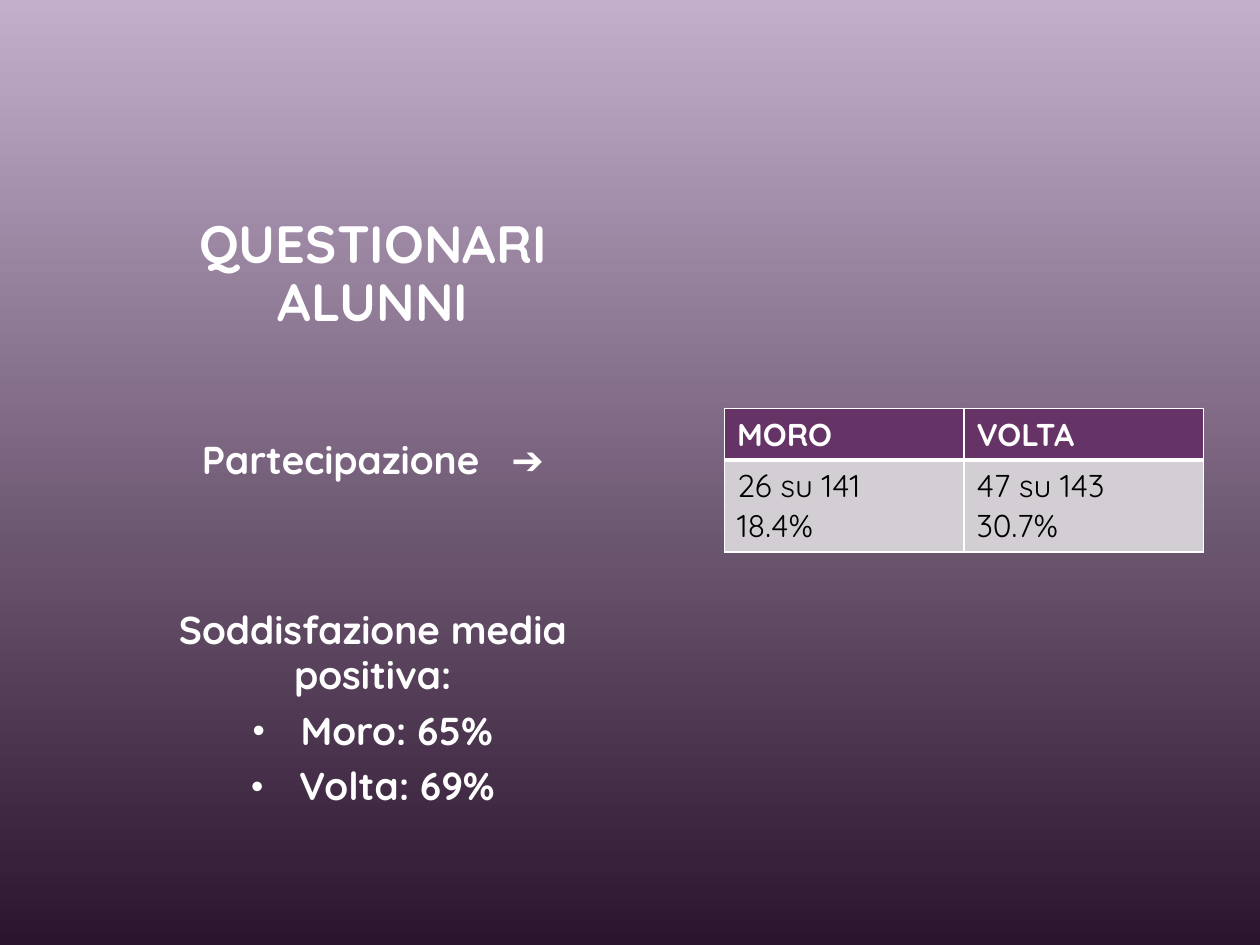
from lxml.etree import SubElement
from pptx import Presentation
from pptx.dml.color import RGBColor
from pptx.enum.text import MSO_ANCHOR, PP_ALIGN
from pptx.oxml import parse_xml
from pptx.oxml.ns import nsdecls, qn
from pptx.util import Inches, Pt

WHITE = RGBColor(0xFF, 0xFF, 0xFF)
BLACK = RGBColor(0x00, 0x00, 0x00)
LILAC = RGBColor(0xC3, 0xAF, 0xCC)
DARK_PLUM = RGBColor(0x2B, 0x14, 0x2D)
PURPLE = RGBColor(0x66, 0x33, 0x66)
PALE_GREY = RGBColor(0xD3, 0xCE, 0xD3)
FONT = "Quicksand"


def set_background(slide):
    fill = slide.background.fill
    fill.gradient()
    fill.gradient_angle = 270
    for stop, color, position in zip(fill.gradient_stops, (LILAC, DARK_PLUM), (0, 1)):
        stop.color.rgb = color
        stop.position = position


def format_run(run, size, color=WHITE, bold=True, name=FONT):
    run.font.name = name
    run.font.size = Pt(size)
    run.font.bold = bold
    run.font.color.rgb = color


def add_text_frame(slide, left, top, width, height, anchor):
    box = slide.shapes.add_textbox(Inches(left), Inches(top), Inches(width), Inches(height))
    box.text_frame.word_wrap = True
    box.text_frame.vertical_anchor = anchor
    return box.text_frame


def add_title(slide, left, top, width, height):
    text_frame = add_text_frame(slide, left, top, width, height, MSO_ANCHOR.BOTTOM)
    text_frame.text = "QUESTIONARI\vALUNNI"
    paragraph = text_frame.paragraphs[0]
    paragraph.alignment = PP_ALIGN.CENTER
    paragraph.line_spacing = 0.92
    for run in paragraph.runs:
        format_run(run, 30)


def add_bullet(paragraph):
    properties = paragraph._p.get_or_add_pPr()
    properties.set("marL", str(Inches(0.38)))
    properties.set("indent", str(-Inches(0.38)))
    SubElement(properties, qn("a:buSzPct"), val="90000")
    SubElement(properties, qn("a:buFont"), typeface="Arial")
    SubElement(properties, qn("a:buChar"), char="•")


def add_results(slide, left, top, width, height):
    text_frame = add_text_frame(slide, left, top, width, height, MSO_ANCHOR.TOP)
    # Text, space before, bulleted
    lines = [
        ("Partecipazione", 0, False),
        ("Soddisfazione media positiva:", 71, False),
        ("Moro: 65%", 6, True),
        ("Volta: 69%", 6, True),
    ]
    for index, (text, space_before, bulleted) in enumerate(lines):
        paragraph = text_frame.add_paragraph() if index else text_frame.paragraphs[0]
        paragraph.text = text
        if bulleted:
            add_bullet(paragraph)
        paragraph.alignment = PP_ALIGN.CENTER
        paragraph.line_spacing = 0.97
        paragraph.space_before = Pt(space_before)
        format_run(paragraph.runs[0], 22.2)

    # Arrow towards the table, set apart by a widened space
    paragraph = text_frame.paragraphs[0]
    for text, font_name in ((" ", FONT), ("➔", "Arial")):
        run = paragraph.add_run()
        run.text = text
        format_run(run, 22.2, name=font_name)
    paragraph.runs[1].font._element.set("spc", "1200")


def set_borders(cell, bottom_width):
    properties = cell._tc.get_or_add_tcPr()
    widths = (("lnL", 1), ("lnR", 1), ("lnT", 1), ("lnB", bottom_width))
    for position, (tag, width) in enumerate(widths):
        line = parse_xml(
            f'<a:{tag} {nsdecls("a")} w="{Pt(width)}"><a:solidFill>'
            f'<a:srgbClr val="{WHITE}"/></a:solidFill></a:{tag}>'
        )
        properties.insert(position, line)


def add_participation_table(slide, left, top, width, row_heights):
    rows = [("MORO", "VOLTA"), ("26 su 141\n18.4%", "47 su 143\n30.7%")]
    table = slide.shapes.add_table(
        len(rows), 2, Inches(left), Inches(top), Inches(width), Inches(sum(row_heights))
    ).table
    for row, height in zip(table.rows, row_heights):
        row.height = Inches(height)
    for row_index, texts in enumerate(rows):
        header = row_index == 0
        for column_index, text in enumerate(texts):
            cell = table.cell(row_index, column_index)
            cell.text_frame.text = text
            cell.fill.solid()
            cell.fill.fore_color.rgb = PURPLE if header else PALE_GREY
            set_borders(cell, bottom_width=3 if header else 1)
            if not header:
                cell._tc.tcPr.find(qn("a:lnT")).set("w", str(Pt(3)))
            for paragraph in cell.text_frame.paragraphs:
                format_run(paragraph.runs[0], 18, WHITE if header else BLACK, header)


def main():
    presentation = Presentation()
    presentation.slide_width = Inches(10)
    presentation.slide_height = Inches(7.5)
    slide = presentation.slides.add_slide(presentation.slide_layouts[6])
    set_background(slide)
    add_title(slide, 1.06, 0.92, 3.8, 1.77)
    add_participation_table(slide, 5.75, 3.24, 3.8, (0.41, 0.73))
    add_results(slide, 1.06, 3.43, 3.8, 3.19)
    presentation.save("out.pptx")


if __name__ == "__main__":
    main()
